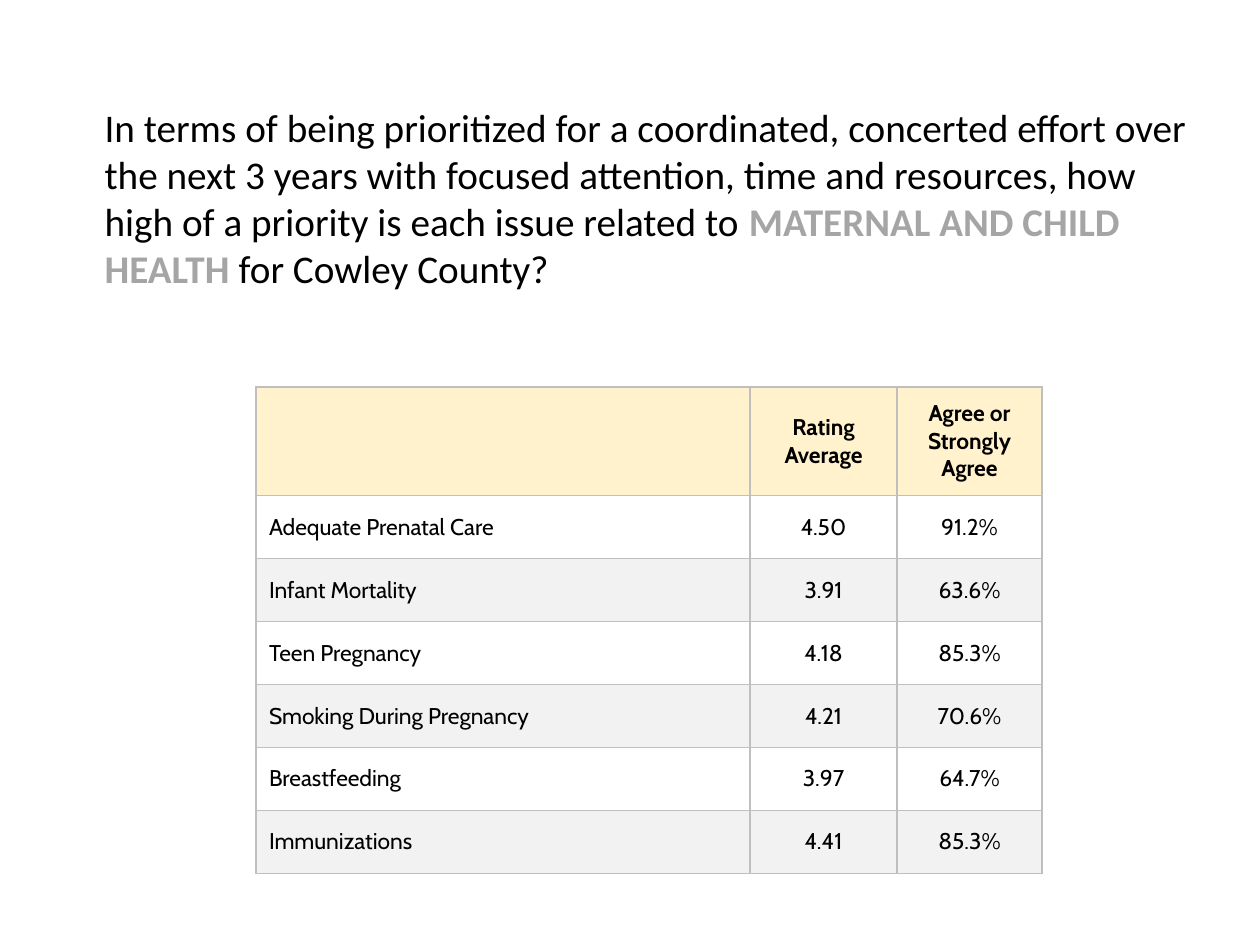
import pptx
import pptx.dml.color
import pptx.enum.text
import pptx.oxml
import pptx.oxml.ns
import pptx.util

PX = 914400 // 126
ALIGN = pptx.enum.text.PP_ALIGN
ANCHOR = pptx.enum.text.MSO_ANCHOR

BLACK, GREY, BORDER = "000000", "A5A5A5", "BFBFBF"
HEADER_FILL, BAND_FILL = "FFF2CC", "F2F2F2"

COLUMN_WIDTHS = [494, 147, 145]
HEADER_HEIGHT, ROW_HEIGHT, CELL_MARGIN = 107, 63, 13
RATINGS = [
    ("", "Rating Average", "Agree or Strongly Agree"),
    ("Adequate Prenatal Care", "4.50", "91.2%"),
    ("Infant Mortality", "3.91", "63.6%"),
    ("Teen Pregnancy", "4.18", "85.3%"),
    ("Smoking During Pregnancy", "4.21", "70.6%"),
    ("Breastfeeding", "3.97", "64.7%"),
    ("Immunizations", "4.41", "85.3%"),
]


def px(length):
    return pptx.util.Emu(length * PX)


def rgb(colour):
    return pptx.dml.color.RGBColor.from_string(colour)


def add_text(para, text, font="Cabin", size=13, colour=BLACK, bold=False):
    span = para.add_run()
    span.text = text
    span.font.name = font
    span.font.size = pptx.util.Pt(size)
    span.font.color.rgb = rgb(colour)
    span.font.bold = bold


def add_question(page):
    title = page.shapes.title
    title.left, title.top, title.width, title.height = map(px, (92, 97, 1125, 218))
    box = title.text_frame
    box.word_wrap = True
    box.auto_size = pptx.enum.text.MSO_AUTO_SIZE.NONE
    box.vertical_anchor = ANCHOR.TOP
    para = box.paragraphs[0]
    para.alignment = ALIGN.LEFT
    question = {"font": "Calibri", "size": 22.4}
    add_text(para, "In terms of being prioritized for a coordinated, concerted effort over "
             "the next 3 years with focused attention, time and resources, how high of a "
             "priority is each issue related to ", **question)
    add_text(para, "MATERNAL AND CHILD HEALTH", colour=GREY, bold=True, **question)
    add_text(para, " for Cowley County?", **question)


def set_borders(cell, colour, width):
    properties = cell._tc.get_or_add_tcPr()
    for side in ("lnL", "lnR", "lnT", "lnB"):
        properties.append(pptx.oxml.parse_xml(
            f'<a:{side} {pptx.oxml.ns.nsdecls("a")} w="{pptx.util.Pt(width)}">'
            f'<a:solidFill><a:srgbClr val="{colour}"/></a:solidFill></a:{side}>'))


def fill_cell(cell, text, fill, centred, bold):
    cell.vertical_anchor = ANCHOR.MIDDLE
    cell.margin_left = cell.margin_right = px(CELL_MARGIN)
    cell.margin_top = cell.margin_bottom = px(CELL_MARGIN)
    set_borders(cell, BORDER, 1)
    if fill:
        cell.fill.solid()
        cell.fill.fore_color.rgb = rgb(fill)
    else:
        cell.fill.background()
    para = cell.text_frame.paragraphs[0]
    para.alignment = ALIGN.CENTER if centred else ALIGN.LEFT
    if text:
        add_text(para, text, bold=bold)


def add_ratings(page):
    heights = [HEADER_HEIGHT] + [ROW_HEIGHT] * (len(RATINGS) - 1)
    table = page.shapes.add_table(
        len(RATINGS), len(COLUMN_WIDTHS), px(256), px(387),
        px(sum(COLUMN_WIDTHS)), px(sum(heights))).table
    table.first_row = table.horz_banding = False
    for column, width in zip(table.columns, COLUMN_WIDTHS):
        column.width = px(width)
    for i, (row, height, texts) in enumerate(zip(table.rows, heights, RATINGS)):
        row.height = px(height)
        # Header first, then every second row is shaded
        fill = HEADER_FILL if i == 0 else BAND_FILL if i % 2 == 0 else None
        for j, text in enumerate(texts):
            fill_cell(row.cells[j], text, fill, centred=j > 0, bold=i == 0)


def main():
    deck = pptx.Presentation()
    deck.slide_width = pptx.util.Inches(10)
    deck.slide_height = pptx.util.Inches(7.5)
    page = deck.slides.add_slide(deck.slide_layouts[5])
    # Survey question
    add_question(page)
    # Table of ratings
    add_ratings(page)
    deck.save("out.pptx")


if __name__ == "__main__":
    main()
